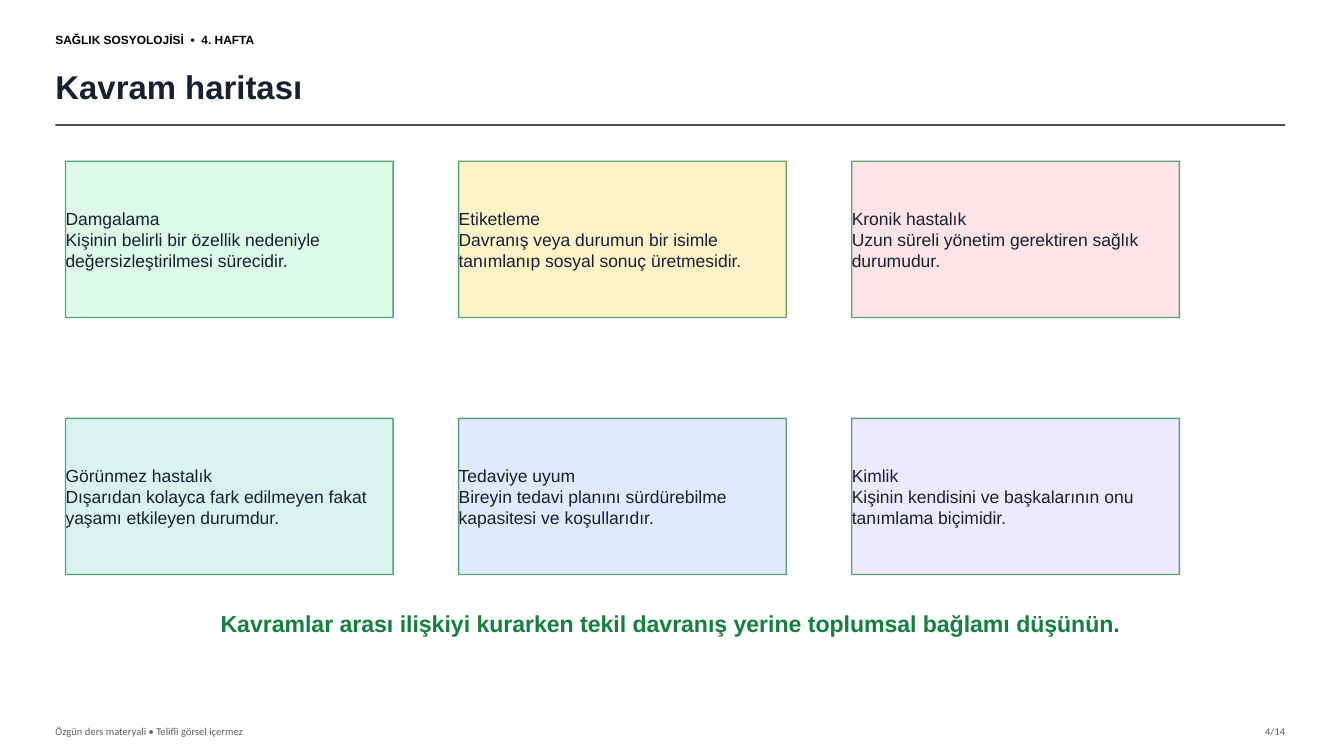
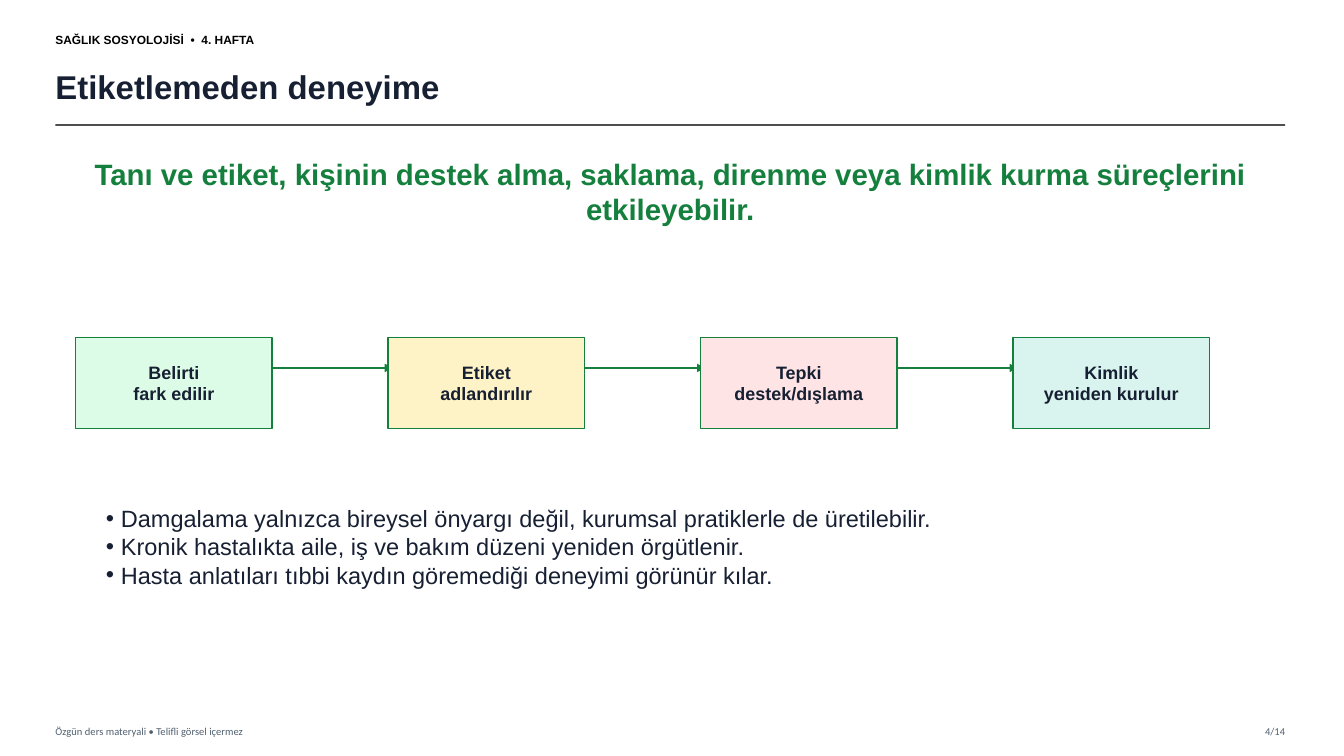
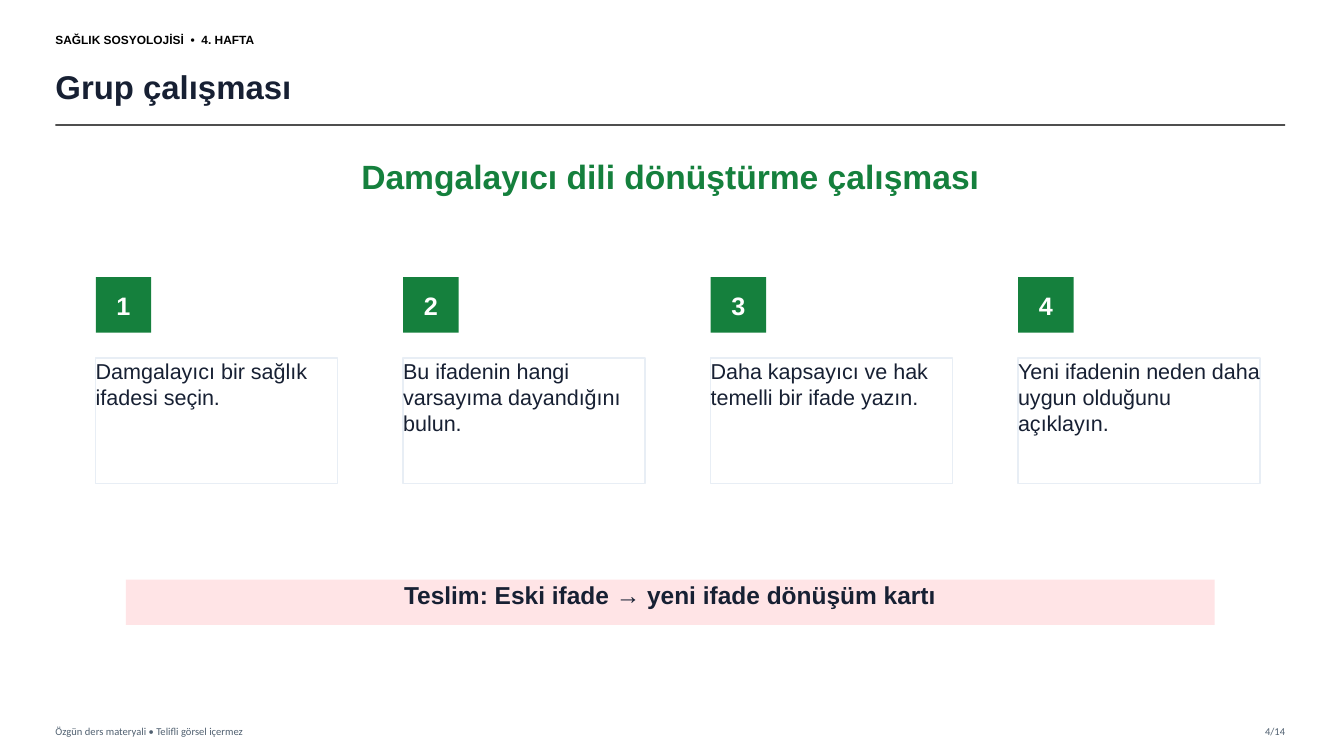
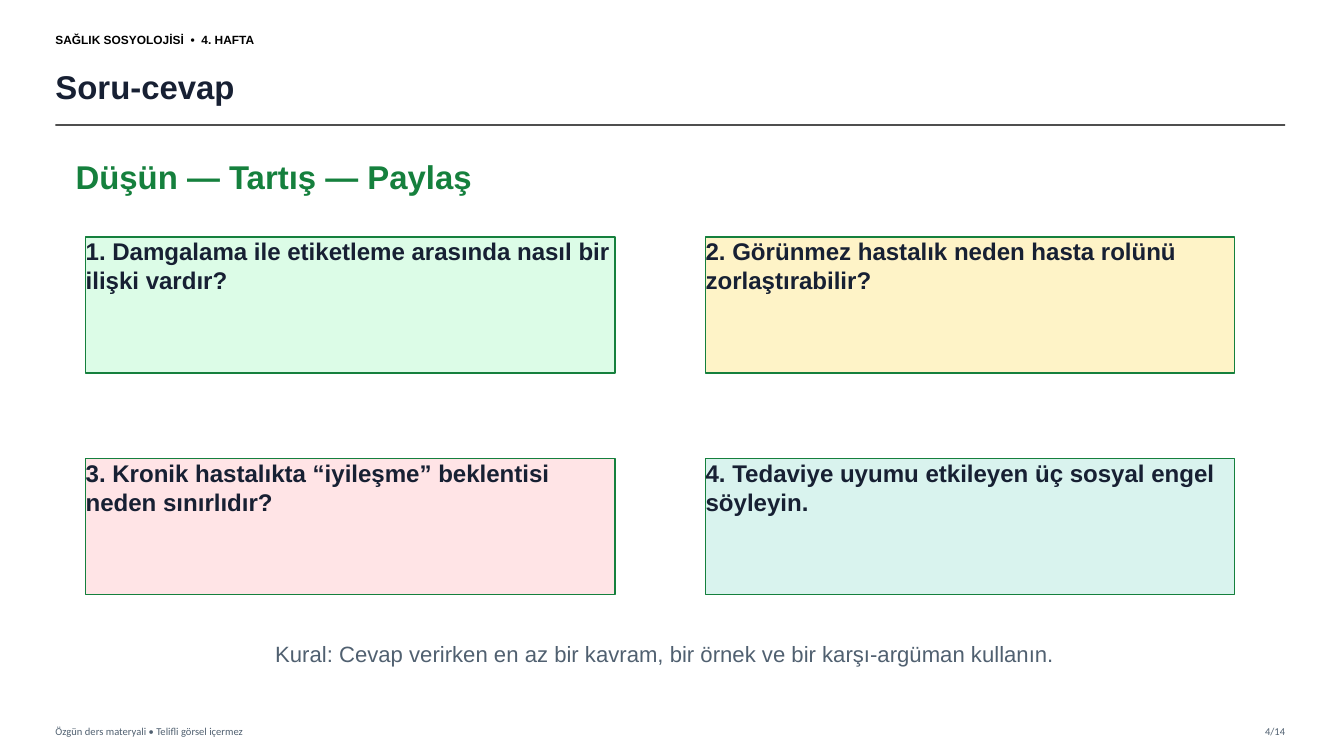
from pptx import Presentation
from pptx.dml.color import RGBColor
from pptx.enum.shapes import MSO_CONNECTOR, MSO_SHAPE
from pptx.enum.text import MSO_ANCHOR, PP_ALIGN
from pptx.oxml.ns import qn
from pptx.util import Inches, Pt
from lxml import etree

RECT = MSO_SHAPE.RECTANGLE
STRAIGHT = MSO_CONNECTOR.STRAIGHT
TOP, MID = MSO_ANCHOR.TOP, MSO_ANCHOR.MIDDLE
LEFT, MIDST, RIGHT = PP_ALIGN.LEFT, PP_ALIGN.CENTER, PP_ALIGN.RIGHT

CELL = 0.1
COLS, ROWS = 133.33, 75
INK, GREEN, GREY, WHITE = "172033", "15803D", "506070", "FFFFFF"
BLACK, RULE, PALE = "000000", "333333", "E8EEF5"
MINT, CREAM, ROSE, TEAL, SKY, LILAC = TINTS = (
    "DCFCE7", "FEF3C7", "FFE4E6", "D9F3EE", "DFEAFE", "EDE9FE")


def paint(code):
    return RGBColor.from_string(code)


def size(cells):
    return Inches(cells * CELL)


def grid(items, cols, left, top, wide, high):
    for i, item in enumerate(items):
        row, col = divmod(i, cols)
        yield left + col * wide, top + row * high, item


class Deck:
    def __init__(self):
        self.show = Presentation()
        self.show.slide_width = size(COLS)
        self.show.slide_height = size(ROWS)
        self.blank = self.show.slide_layouts[6]
        self.slide = None

    def page(self, title):
        self.slide = self.show.slides.add_slide(self.blank)
        head = self.text((5.5, 2.5, 36, 2.8), [], 8.5, anchor=MID)
        para = head.text_frame.paragraphs[0]
        for word in ("SAĞLIK SOSYOLOJİSİ", " ", "•", " ", "4. HAFTA"):
            run = self.run(para, word, 8.5, BLACK, True)
            if word == " ":
                run.font._element.set("spc", "236")
        self.text((5.5, 5.8, 119.5, 5.5), [title], 23.5, bold=True, anchor=MID)
        self.line(5.5, 127.5, 12.4, RULE, 1.2, fade=85)
        foot = {"hue": GREY, "anchor": MID, "face": "Calibri"}
        self.text((5.5, 71.4, 60, 2.2),
                  ["Özgün ders materyali • Telifli görsel içermez"], 7.5, **foot)
        self.text((121, 71.4, 6.5, 2.2), ["4/14"], 7.5, align=RIGHT, **foot)

    def run(self, para, word, pts, hue, bold, face="Arial"):
        run = para.add_run()
        run.text = word
        font = run.font
        font.name, font.size, font.bold = face, Pt(pts), bold
        font.color.rgb = paint(hue)
        return run

    def fill(self, shape, lines, pts, hue=INK, bold=False, align=LEFT,
             anchor=TOP, face="Arial", dots=False):
        frame = shape.text_frame
        frame.word_wrap = True
        frame.vertical_anchor = anchor
        frame.margin_left = frame.margin_right = 0
        frame.margin_top = frame.margin_bottom = 0
        for i, line in enumerate(lines):
            para = frame.add_paragraph() if i else frame.paragraphs[0]
            para.alignment = align
            if dots:
                self.dot(para)
            self.run(para, line, pts, hue, bold, face)
        return shape

    def dot(self, para):
        props = para._p.get_or_add_pPr()
        props.set("marL", str(size(1.5)))
        props.set("indent", str(-size(1.5)))
        etree.SubElement(props, qn("a:buFont"), typeface="Arial")
        etree.SubElement(props, qn("a:buChar"), char="•")

    def text(self, area, lines, pts, **style):
        box = self.slide.shapes.add_textbox(*map(size, area))
        return self.fill(box, lines, pts, **style)

    def box(self, area, lines, pts, tint, edge=None, fade=None, **style):
        box = self.slide.shapes.add_shape(RECT, *map(size, area))
        box.shadow.inherit = False
        box.fill.solid()
        box.fill.fore_color.rgb = paint(tint)
        if edge:
            self.edge(box, edge, 1, fade)
        else:
            box.line.fill.background()
        return self.fill(box, lines, pts, **style)

    def edge(self, shape, hue, pts, fade=None):
        shape.line.color.rgb = paint(hue)
        shape.line.width = Pt(pts)
        line = shape._element.spPr.find(qn("a:ln"))
        if fade:
            tone = line.find(".//" + qn("a:srgbClr"))
            etree.SubElement(tone, qn("a:alpha"), val=str(fade * 1000))
        return line

    def line(self, start, end, row, hue, pts, fade=None, arrow=False):
        link = self.slide.shapes.add_connector(
            STRAIGHT, size(start), size(row), size(end), size(row))
        line = self.edge(link, hue, pts, fade)
        if arrow:
            etree.SubElement(line, qn("a:tailEnd"), type="triangle")
        etree.SubElement(link._element.spPr, qn("a:effectLst"))


def terms(deck):
    deck.page("Kavram haritası")
    cards = (
        ("Damgalama", "Kişinin belirli bir özellik nedeniyle değersizleştirilmesi sürecidir."),
        ("Etiketleme", "Davranış veya durumun bir isimle tanımlanıp sosyal sonuç üretmesidir."),
        ("Kronik hastalık", "Uzun süreli yönetim gerektiren sağlık durumudur."),
        ("Görünmez hastalık", "Dışarıdan kolayca fark edilmeyen fakat yaşamı etkileyen durumdur."),
        ("Tedaviye uyum", "Bireyin tedavi planını sürdürebilme kapasitesi ve koşullarıdır."),
        ("Kimlik", "Kişinin kendisini ve başkalarının onu tanımlama biçimidir."),
    )
    for x, y, (card, tint) in grid(zip(cards, TINTS), 3, 6.5, 16, 39, 25.5):
        deck.box((x, y, 32.5, 15.5), card, 12.5, tint, GREEN, 70, anchor=MID)
    deck.text((10, 60.5, 113, 4.5),
              ["Kavramlar arası ilişkiyi kurarken tekil davranış yerine toplumsal bağlamı düşünün."],
              16.5, hue=GREEN, bold=True, align=MIDST)


def flow(deck):
    deck.page("Etiketlemeden deneyime")
    steps = (
        ("Belirti", "fark edilir"),
        ("Etiket", "adlandırılır"),
        ("Tepki", "destek/dışlama"),
        ("Kimlik", "yeniden kurulur"),
    )
    pitch = 31
    for i in range(len(steps) - 1):
        start = 25.5 + i * pitch
        deck.line(start, start + 13.5, 36.5, GREEN, 2, arrow=True)
    for x, y, (step, tint) in grid(zip(steps, TINTS), 4, 7.5, 33.5, pitch, 0):
        deck.box((x, y, 19.5, 9), step, 12.8, tint, GREEN,
                 bold=True, align=MIDST, anchor=MID)
    deck.text((8, 15.5, 117, 10.5),
              ["Tanı ve etiket, kişinin destek alma, saklama, direnme veya kimlik kurma süreçlerini etkileyebilir."],
              21, hue=GREEN, bold=True, align=MIDST)
    deck.text((10.5, 50, 110, 12.5), [
        "Damgalama yalnızca bireysel önyargı değil, kurumsal pratiklerle de üretilebilir.",
        "Kronik hastalıkta aile, iş ve bakım düzeni yeniden örgütlenir.",
        "Hasta anlatıları tıbbi kaydın göremediği deneyimi görünür kılar.",
    ], 16.8, dots=True)


def tasks(deck):
    deck.page("Grup çalışması")
    deck.text((7.5, 15.5, 118, 6.5), ["Damgalayıcı dili dönüştürme çalışması"],
              24, hue=GREEN, bold=True, align=MIDST)
    steps = (
        "Damgalayıcı bir sağlık ifadesi seçin.",
        "Bu ifadenin hangi varsayıma dayandığını bulun.",
        "Daha kapsayıcı ve hak temelli bir ifade yazın.",
        "Yeni ifadenin neden daha uygun olduğunu açıklayın.",
    )
    for x, y, (num, step) in grid(enumerate(steps, 1), 4, 9.5, 27.5, 30.5, 0):
        deck.box((x, y, 5.5, 5.5), [str(num)], 18, GREEN,
                 hue=WHITE, bold=True, align=MIDST, anchor=MID)
        deck.box((x, y + 8, 24, 12.5), [step], 15.4, WHITE, PALE)
    deck.box((12.5, 57.5, 108, 4.5), ["Teslim: Eski ifade → yeni ifade dönüşüm kartı"],
             17.5, ROSE, bold=True, align=MIDST)


def quiz(deck):
    deck.page("Soru-cevap")
    deck.text((7.5, 15.5, 57, 5), ["Düşün — Tartış — Paylaş"],
              23.5, hue=GREEN, bold=True)
    asks = (
        "1. Damgalama ile etiketleme arasında nasıl bir ilişki vardır?",
        "2. Görünmez hastalık neden hasta rolünü zorlaştırabilir?",
        "3. Kronik hastalıkta “iyileşme” beklentisi neden sınırlıdır?",
        "4. Tedaviye uyumu etkileyen üç sosyal engel söyleyin.",
    )
    for x, y, (ask, tint) in grid(zip(asks, TINTS), 2, 8.5, 23.5, 61.5, 22):
        deck.box((x, y, 52.5, 13.5), [ask], 17.2, tint, GREEN, bold=True)
    deck.text((10, 63.5, 112, 3.5),
              ["Kural: Cevap verirken en az bir kavram, bir örnek ve bir karşı-argüman kullanın."],
              15.8, hue=GREY, align=MIDST)


def main():
    deck = Deck()
    for build in (terms, flow, tasks, quiz):
        build(deck)
    deck.show.save("out.pptx")


if __name__ == "__main__":
    main()
